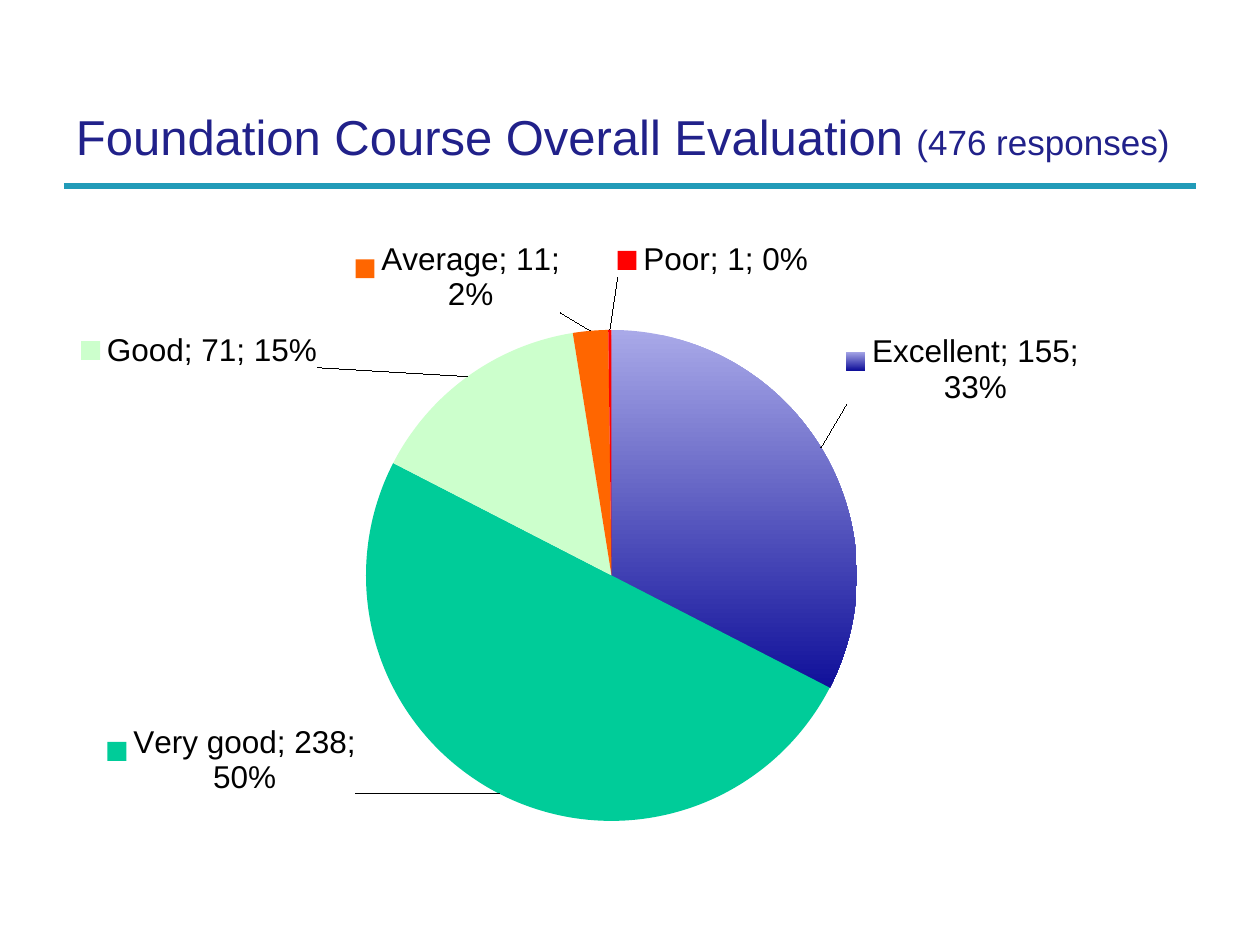
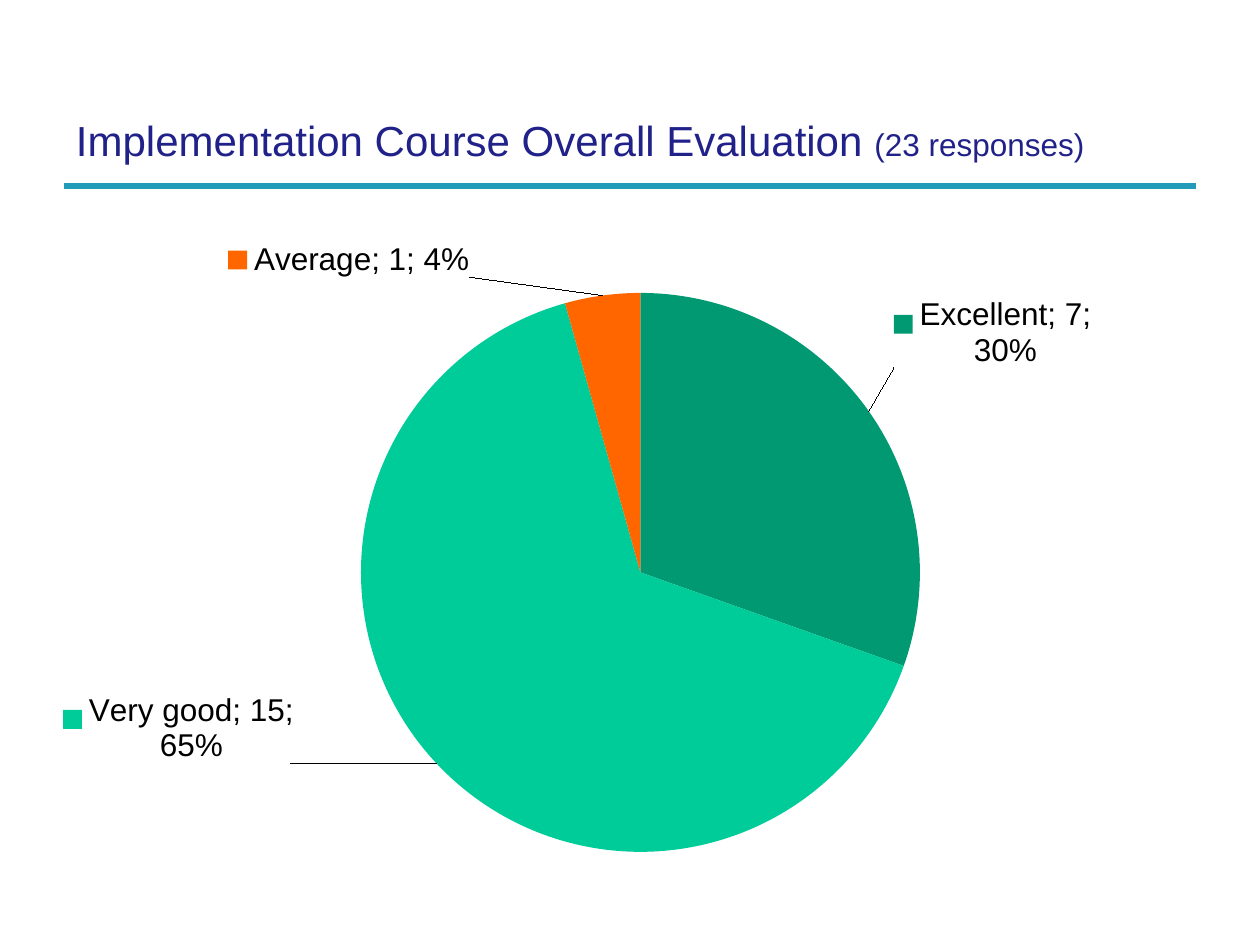
from lxml import etree
from pptx import Presentation
from pptx.chart.data import CategoryChartData
from pptx.dml.color import RGBColor
from pptx.enum.chart import XL_CHART_TYPE, XL_LABEL_POSITION
from pptx.enum.shapes import MSO_CONNECTOR
from pptx.enum.text import MSO_ANCHOR, MSO_AUTO_SIZE, PP_ALIGN
from pptx.oxml import parse_xml
from pptx.oxml.ns import nsdecls, qn
from pptx.util import Emu, Pt

PX_PER_INCH = 126
FONT = "Arial"
COLORS = {
    "title": "21218A", "rule": "229BB8", "label": "000000",
    "excellent": "009972", "very good": "00CC99", "good": "CCFFCC",
    "average": "FF6600", "poor": "FF0000",
    "gradient top": "A9A9E8", "gradient bottom": "10109A",
}
RATINGS = ["Excellent", "Very good", "Good", "Average", "Poor"]
CHART_FRAME = (63, 234, 1134, 665)
# Shift of each label from its automatic place, in px
LABEL_SHIFTS = {
    "Excellent": (19, -39), "Very good": (-140, -76), "Good": (-146, -3),
    "Average": (-132, -11), "Poor": (103, -45),
}
LABEL_CONTENT = {
    "show_legend_key": True, "show_value": True, "show_category_name": True,
    "show_series_name": False, "show_percentage": True,
    "position": XL_LABEL_POSITION.BEST_FIT,
}
EVALUATIONS = [
    {"title": "Foundation Course Overall Evaluation ", "title_size": 28,
     "responses": "(476 responses)", "responses_size": 20,
     "counts": [155, 238, 71, 11, 1], "pie_box": (366, 330, 491, 491),
     "gradient": True},
    {"title": "Implementation Course Overall Evaluation ", "title_size": 24,
     "responses": "(23 responses)", "responses_size": 18,
     "counts": [7, 15, 0, 1, 0], "pie_box": (361, 293, 559, 559),
     "gradient": False},
]


def px(length):
    return Emu(round(length * 914400 / PX_PER_INCH))


def rgb(name):
    return RGBColor.from_string(COLORS[name])


def apply(target, values):
    for name, value in values.items():
        setattr(target, name, value)


def add_title(slide, evaluation):
    title = slide.shapes.title
    apply(title, {"left": px(63), "top": px(102), "width": px(1134), "height": px(76)})
    frame = title.text_frame
    margins = dict.fromkeys(
        ["margin_left", "margin_top", "margin_right", "margin_bottom"], px(13))
    apply(frame, {**margins, "word_wrap": True, "auto_size": MSO_AUTO_SIZE.NONE,
                  "vertical_anchor": MSO_ANCHOR.BOTTOM})
    paragraph = frame.paragraphs[0]
    paragraph.alignment = PP_ALIGN.LEFT
    for part in ("title", "responses"):
        run = paragraph.add_run()
        run.text = evaluation[part]
        apply(run.font, {"name": FONT, "size": Pt(evaluation[part + "_size"])})
        run.font.color.rgb = rgb("title")


def add_title_rule(slide):
    rule = slide.shapes.add_connector(
        MSO_CONNECTOR.STRAIGHT, px(64), px(186), px(1196), px(186))
    rule.line.color.rgb = rgb("rule")
    rule.line.width = Pt(3)
    etree.SubElement(rule.element.spPr, qn("a:effectLst"))


def manual_layout(values):
    """Build a chart layout element from its settings, in schema order."""
    layout = parse_xml(f"<c:layout {nsdecls('c')}><c:manualLayout/></c:layout>")
    for name, value in values.items():
        etree.SubElement(layout[0], qn("c:" + name)).set("val", str(value))
    return layout


def place_pie(chart, pie_box):
    left, top, width, height = CHART_FRAME
    x, y, w, h = pie_box
    plot_area = chart.element.find(".//" + qn("c:plotArea"))
    for automatic in plot_area.findall(qn("c:layout")):
        plot_area.remove(automatic)
    plot_area.insert(0, manual_layout({
        "layoutTarget": "inner", "xMode": "edge", "yMode": "edge",
        "x": (x - left) / width, "y": (y - top) / height,
        "w": w / width, "h": h / height}))


def color_slices(series, gradient):
    for index, rating in enumerate(RATINGS):
        slice_format = series.points[index].format
        slice_format.line.fill.background()
        fill = slice_format.fill
        if gradient and index == 0:
            fill.gradient()
            fill.gradient_angle = 270
            for stop, end in zip(fill.gradient_stops, ("top", "bottom")):
                stop.color.rgb = rgb("gradient " + end)
        else:
            fill.solid()
            fill.fore_color.rgb = rgb(rating.lower())


def add_labels(chart, series, counts):
    """Label each rating that has responses; drop the labels of the others."""
    labels = series.data_labels
    apply(labels, LABEL_CONTENT)
    apply(labels.font, {"name": FONT, "size": Pt(18)})
    labels.font.color.rgb = rgb("label")
    label_list = chart.element.find(f".//{qn('c:ser')}/{qn('c:dLbls')}")
    separator = parse_xml(f"<c:separator {nsdecls('c')}>; </c:separator>")
    label_list.find(qn("c:showPercent")).addnext(separator)
    bubble_flag = label_list.find(qn("c:showBubbleSize"))
    if bubble_flag is not None:
        bubble_flag.addnext(separator)
    shared = [child for child in label_list if child.tag != qn("c:showLeaderLines")]
    for index, (rating, count) in enumerate(zip(RATINGS, counts)):
        label = parse_xml(f'<c:dLbl {nsdecls("c")}><c:idx val="{index}"/></c:dLbl>')
        if count:
            shift_x, shift_y = LABEL_SHIFTS[rating]
            label.append(manual_layout({"x": shift_x / CHART_FRAME[2],
                                        "y": shift_y / CHART_FRAME[3]}))
            for child in shared:
                label.append(parse_xml(etree.tostring(child)))
        else:
            etree.SubElement(label, qn("c:delete")).set("val", "1")
        label_list.insert(index, label)


def add_rating_pie(slide, evaluation):
    ratings = CategoryChartData()
    ratings.categories = RATINGS
    ratings.add_series("Series 1", evaluation["counts"])
    chart = slide.shapes.add_chart(
        XL_CHART_TYPE.PIE, *map(px, CHART_FRAME), ratings).chart
    apply(chart, {"has_title": False, "has_legend": False})
    apply(chart.font, {"name": FONT, "size": Pt(18)})
    chart.font.color.rgb = rgb("label")
    pie = chart.plots[0]
    pie.vary_by_categories = True
    color_slices(pie.series[0], evaluation["gradient"])
    add_labels(chart, pie.series[0], evaluation["counts"])
    place_pie(chart, evaluation["pie_box"])


def main():
    deck = Presentation()
    apply(deck, {"slide_width": px(1260), "slide_height": px(945)})
    title_only = deck.slide_layouts[5]
    for evaluation in EVALUATIONS:
        slide = deck.slides.add_slide(title_only)
        add_title_rule(slide)
        add_title(slide, evaluation)
        add_rating_pie(slide, evaluation)
    deck.save("out.pptx")


if __name__ == "__main__":
    main()
